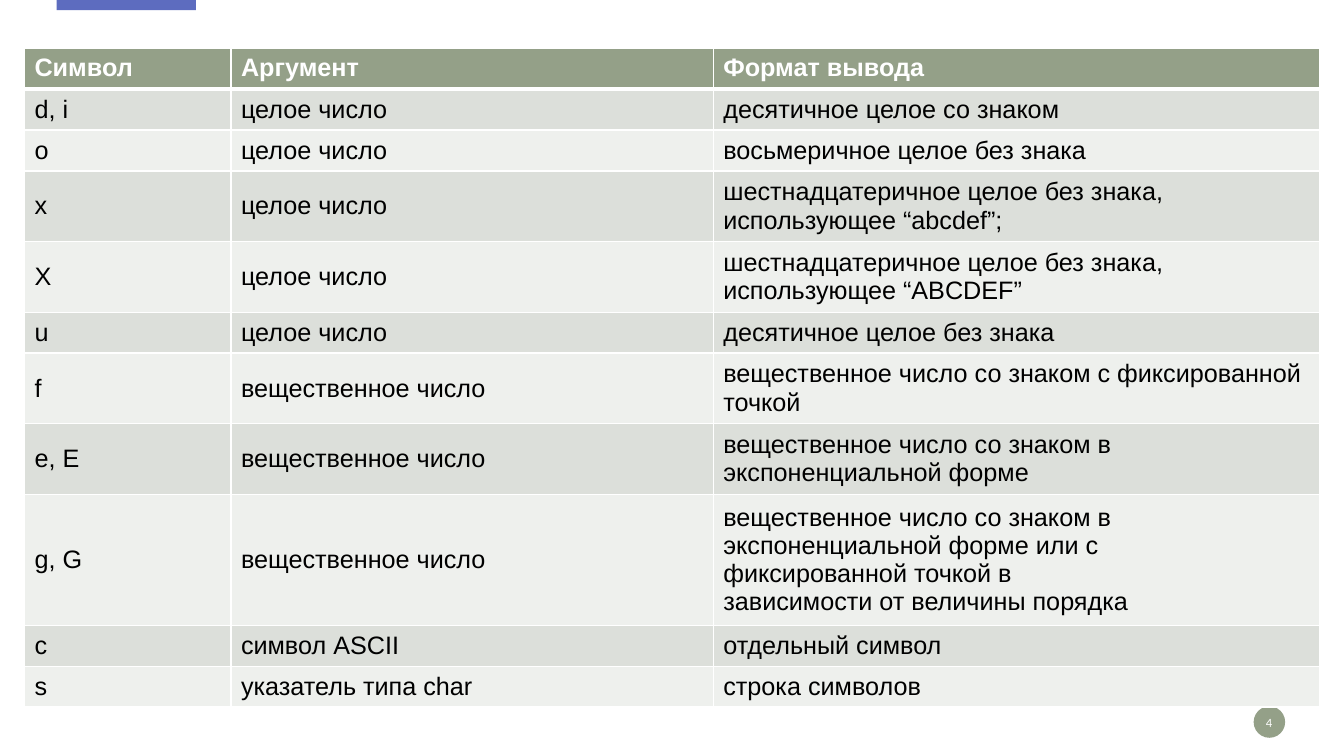
from pptx import Presentation
from pptx.dml.color import RGBColor
from pptx.enum.shapes import MSO_SHAPE as Shape
from pptx.enum.text import MSO_ANCHOR as Anchor, PP_ALIGN as Align
from pptx.oxml import parse_xml
from pptx.oxml.ns import nsdecls
from pptx.util import Pt

WHITE, BLACK, SAGE, INDIGO = "FFFFFF", "000000", "94A088", "5D6CBF"
BANDS = ("DCDFDA", "EEF0ED")
INTEGER, REAL = "целое число", "вещественное число"
FORMATS = [
    ("Символ", "Аргумент", "Формат вывода"),
    ("d, i", INTEGER, "десятичное целое со знаком"),
    ("o", INTEGER, "восьмеричное целое без знака"),
    ("x", INTEGER, "шестнадцатеричное целое без знака, использующее “abcdef”;"),
    ("X", INTEGER, "шестнадцатеричное целое без знака, использующее “ABCDEF”"),
    ("u", INTEGER, "десятичное целое без знака"),
    ("f", REAL, "вещественное число со знаком с фиксированной точкой"),
    ("e, E", REAL, "вещественное число со знаком в экспоненциальной форме"),
    ("g, G", REAL, "вещественное число со знаком в\nэкспоненциальной форме или с\n"
                   "фиксированной точкой в\nзависимости от величины порядка"),
    ("c", "символ ASCII", "отдельный символ"),
    ("s", "указатель типа char", "строка символов"),
]


def color(code):
    return RGBColor.from_string(code)


def apply(target, values):
    for name, value in values.items():
        setattr(target, name, value)


class SlideBuilder:
    """Draws styled elements on the current slide, with lengths in points."""

    def __init__(self, page):
        self.page = page
        self.body = {"name": "Arial", "size": Pt(18), "bold": False}
        self.header = {**self.body, "bold": True}
        self.number = {"name": "Calibri", "size": Pt(9)}

    def shape(self, kind, bounds, fill):
        shape = self.page.shapes.add_shape(kind, *map(Pt, bounds))
        shape.shadow.inherit = False
        shape.fill.solid()
        shape.fill.fore_color.rgb = color(fill)
        shape.line.fill.background()

    def fill_text(self, frame, text, style, ink, align=Align.LEFT):
        frame.text = text
        for para in frame.paragraphs:
            para.alignment = align
            for span in para.runs:
                apply(span.font, style)
                span.font.color.rgb = color(ink)

    def text(self, bounds, text):
        frame = self.page.shapes.add_textbox(*map(Pt, bounds)).text_frame
        apply(frame, {"word_wrap": True, "vertical_anchor": Anchor.MIDDLE,
                      "margin_left": 0, "margin_right": 0,
                      "margin_top": 0, "margin_bottom": 0})
        self.fill_text(frame, text, self.number, WHITE, Align.CENTER)

    def border(self, cell, side, width):
        cell._tc.get_or_add_tcPr().append(parse_xml(
            f'<a:ln{side} {nsdecls("a")} w="{Pt(width)}"><a:solidFill>'
            f'<a:srgbClr val="{WHITE}"/></a:solidFill></a:ln{side}>'))

    def cell(self, cell, text, row):
        is_header = row == 0
        widths = {"L": 1, "R": 1, "T": 3 if row == 1 else 1, "B": 3 if is_header else 1}
        for side, width in widths.items():
            self.border(cell, side, width)
        cell.fill.solid()
        cell.fill.fore_color.rgb = color(SAGE if is_header else BANDS[(row - 1) % 2])
        cell.vertical_anchor = Anchor.TOP if is_header else Anchor.MIDDLE
        self.fill_text(cell.text_frame, text, self.header if is_header else self.body,
                       WHITE if is_header else BLACK)

    def table(self, left, top, widths, row_height, rows):
        table = self.page.shapes.add_table(
            len(rows), len(widths), Pt(left), Pt(top),
            Pt(sum(widths)), Pt(row_height * len(rows))).table
        for column, width in zip(table.columns, widths):
            column.width = Pt(width)
        for index, texts in enumerate(rows):
            table.rows[index].height = Pt(row_height)
            for column, text in enumerate(texts):
                self.cell(table.cell(index, column), text, index)


def main():
    deck = Presentation()
    apply(deck, {"slide_width": Pt(960), "slide_height": Pt(540)})
    builder = SlideBuilder(deck.slides.add_slide(deck.slide_layouts[6]))
    builder.shape(Shape.OVAL, (895.5, 504.5, 22.5, 22.5), SAGE)
    builder.shape(Shape.RECTANGLE, (40.5, 0, 99.5, 7.2), INDIGO)
    builder.text((895, 508.5, 23, 14.5), "4")
    builder.table(17.5, 34.5, (147.5, 344.5, 433), 29.2, FORMATS)
    deck.save("out.pptx")


if __name__ == "__main__":
    main()
